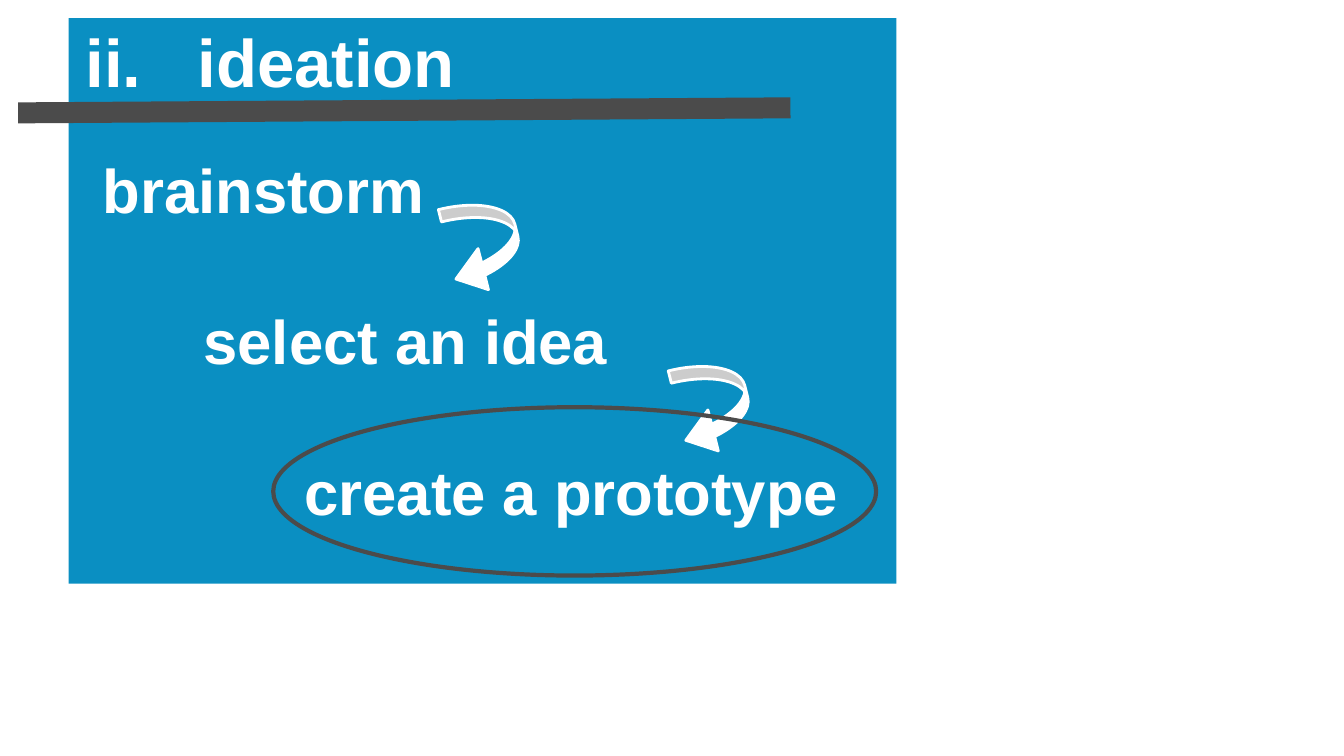
from pptx import Presentation
from pptx.dml.color import RGBColor
from pptx.enum.shapes import MSO_CONNECTOR, MSO_SHAPE
from pptx.oxml.ns import qn
from pptx.util import Inches, Pt
from lxml import etree

RECT = MSO_SHAPE.RECTANGLE
OVAL = MSO_SHAPE.OVAL
CURVE = MSO_SHAPE.CURVED_LEFT_ARROW
LINE = MSO_CONNECTOR.STRAIGHT

BLUE, GREY, WHITE = "0A8FC2", "4B4B4B", "FFFFFF"


def color(code):
    return RGBColor.from_string(code)


class Board:
    font = "Arial"

    def __init__(self, slide):
        self.slide = slide

    def shape(self, kind, box, fill=None, line=None, width=1):
        item = self.slide.shapes.add_shape(kind, *map(Inches, box))
        item.shadow.inherit = False
        if fill:
            item.fill.solid()
            item.fill.fore_color.rgb = color(fill)
        else:
            item.fill.background()
        if line:
            item.line.color.rgb = color(line)
            item.line.width = Pt(width)
        else:
            item.line.fill.background()
        return item

    def arrow(self, left, top):
        item = self.shape(CURVE, (left, top, 0.7, 0.92), WHITE, WHITE, 2)
        item.rotation = 345.8
        for i, value in enumerate((0.18, 0.6, 0.41)):
            item.adjustments[i] = value

    def line(self, start, end, code, width):
        item = self.slide.shapes.add_connector(
            LINE, *map(Inches, (*start, *end)))
        item.line.color.rgb = color(code)
        item.line.width = Pt(width)
        etree.SubElement(item._element.spPr, qn("a:effectLst"))

    def text(self, box, rows, size, gap=0):
        """Write rows of (text, left margin, first-line indent)."""
        frame = self.slide.shapes.add_textbox(*map(Inches, box)).text_frame
        frame.word_wrap = True
        for i, (words, margin, indent) in enumerate(rows):
            para = frame.add_paragraph() if i else frame.paragraphs[0]
            props = para._p.get_or_add_pPr()
            props.set("marL", str(Inches(margin)))
            props.set("indent", str(Inches(indent)))
            para.space_before = Pt(gap if i else 0)
            run = para.add_run()
            run.text = words
            run.font.name = self.font
            run.font.size = Pt(size)
            run.font.bold = True
            run.font.color.rgb = color(WHITE)


def main():
    deck = Presentation()
    deck.slide_width, deck.slide_height = Inches(13.33), Inches(7.5)
    board = Board(deck.slides.add_slide(deck.slide_layouts[6]))

    board.shape(RECT, (0.68, 0.18, 8.21, 5.61), BLUE)
    board.line((0.18, 1.12), (7.84, 1.07), GREY, 15)
    steps = ("brainstorm", "select an idea", "create a prototype")
    board.text((0.92, 1.46, 7.76, 3.75),
               [(step, i, 0) for i, step in enumerate(steps)], 44, 55)
    board.text((0.75, 0.15, 3.9, 0.87), [("ii.\tideation", 1.11, -1.11)], 48)
    for spot in ((4.45, 1.98), (6.73, 3.58)):
        board.arrow(*spot)
    board.shape(OVAL, (2.71, 4.04, 5.98, 1.67), line=GREY, width=3)

    deck.save("out.pptx")


if __name__ == "__main__":
    main()
